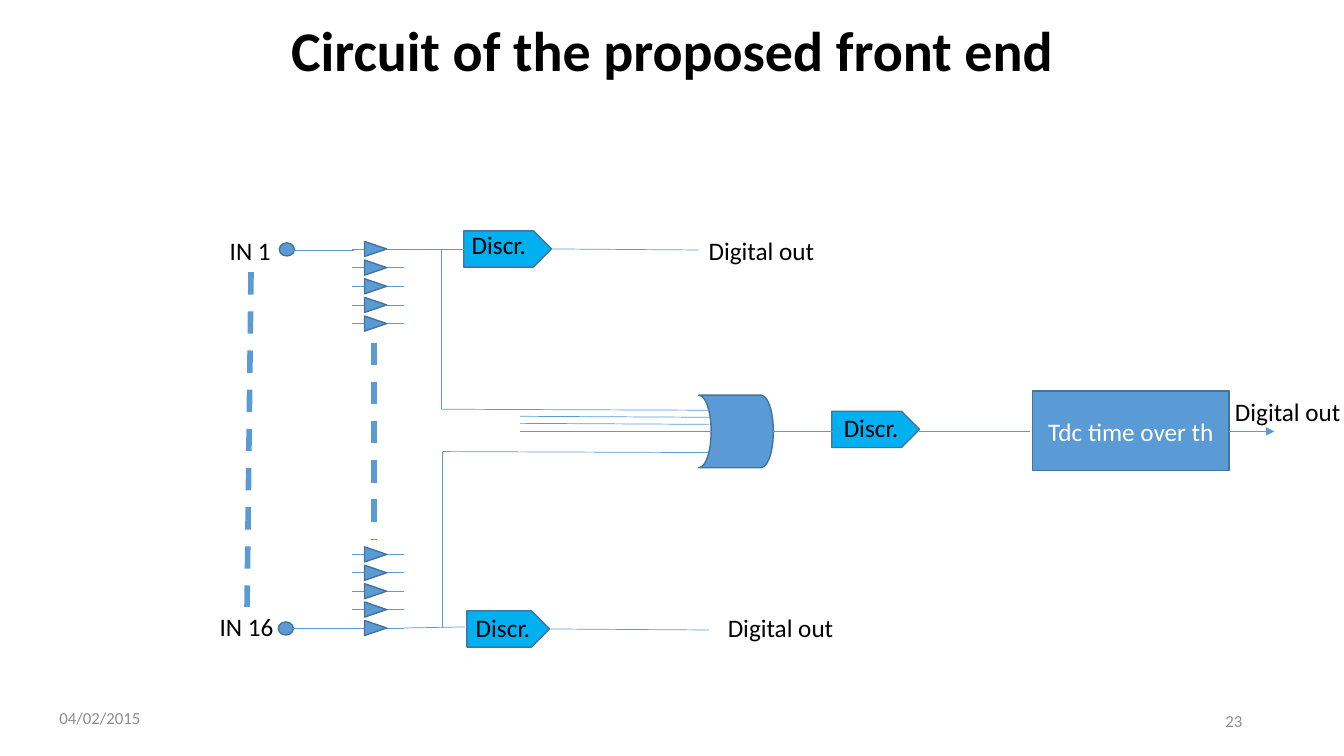
from lxml import etree
from pptx import Presentation
from pptx import util as u
from pptx.dml.color import RGBColor
from pptx.enum import dml, shapes, text
from pptx.oxml.ns import qn

BLUE, OUTLINE, CYAN = "5B9BD5", "43739E", "00B0F0"
BLACK, WHITE, GREY = "000000", "FFFFFF", "8C8C8C"
SHAPE = shapes.MSO_SHAPE
ALIGN = text.PP_ALIGN

presentation = Presentation()
presentation.slide_width = u.Inches(13.33)
presentation.slide_height = u.Inches(7.5)
slide = presentation.slides.add_slide(presentation.slide_layouts[5])


def write(frame, words, size, color, align=ALIGN.LEFT, bold=False):
    paragraph = frame.paragraphs[0]
    paragraph.alignment = align
    run = paragraph.add_run()
    run.text = words
    run.font.name = "Calibri"
    run.font.size = u.Pt(size)
    run.font.bold = bold
    run.font.color.rgb = RGBColor.from_string(color)


def draw_line(x1, y1, x2, y2, width=0.5):
    connector = slide.shapes.add_connector(
        shapes.MSO_CONNECTOR.STRAIGHT, *map(u.Inches, (x1, y1, x2, y2)))
    connector.line.color.rgb = RGBColor.from_string(BLUE)
    connector.line.width = u.Pt(width)
    etree.SubElement(connector._element.spPr, qn("a:effectLst"))
    return connector


# Title
title = slide.shapes.title
title.left, title.top, title.width, title.height = map(u.Inches, (1.86, 0.1, 9.61, 0.77))
title.text_frame.auto_size = text.MSO_AUTO_SIZE.NONE
title.text_frame.vertical_anchor = text.MSO_ANCHOR.MIDDLE
write(title.text_frame, "Circuit of the proposed front end", 40, BLACK, ALIGN.CENTER, True)

# Shapes: kind, left, top, width, height, fill, rotation
blocks = [
    (SHAPE.PENTAGON, 4.6, 2.29, 0.87, 0.36, CYAN, 0),
    (SHAPE.PENTAGON, 4.63, 6.06, 0.82, 0.36, CYAN, 0),
    (SHAPE.PENTAGON, 8.25, 4.08, 0.87, 0.36, CYAN, 0),
    (SHAPE.OVAL, 2.77, 2.41, 0.15, 0.13, BLUE, 0),
    (SHAPE.OVAL, 2.76, 6.17, 0.15, 0.13, BLUE, 0),
    (SHAPE.FLOWCHART_STORED_DATA, 6.93, 3.92, 0.74, 0.72, BLUE, 180),
    (SHAPE.RECTANGLE, 10.24, 3.88, 1.95, 0.79, BLUE, 0),
]

# Two banks of five evenly spaced amplifiers with input and output leads
for first, last in ((2.47, 3.21), (5.5, 6.23)):
    for index in range(5):
        center = first + (last - first) * index / 4
        blocks.append((SHAPE.ISOSCELES_TRIANGLE, 3.65, center - 0.11, 0.15, 0.22, BLUE, 90))
        draw_line(3.49, center, 3.62, center)
        draw_line(3.84, center, 4.01, center)

for kind, left, top, width, height, fill, rotation in blocks:
    shape = slide.shapes.add_shape(kind, *map(u.Inches, (left, top, width, height)))
    shape.rotation = rotation
    shape.shadow.inherit = False
    shape.fill.solid()
    shape.fill.fore_color.rgb = RGBColor.from_string(fill)
    shape.line.color.rgb = RGBColor.from_string(OUTLINE)
    shape.line.width = u.Pt(1)
    if kind == SHAPE.RECTANGLE:
        shape.text_frame.vertical_anchor = text.MSO_ANCHOR.MIDDLE
        write(shape.text_frame, "Tdc time over th", 18, WHITE, ALIGN.CENTER)

# Wires
wires = [
    # First and last channel
    (2.91, 2.48, 3.51, 2.48), (4.01, 2.47, 4.61, 2.47), (5.47, 2.47, 6.93, 2.48),
    (2.91, 6.23, 3.51, 6.23), (4.01, 6.23, 4.61, 6.22), (5.46, 6.24, 7.03, 6.25),
    # Branches into the gate
    (4.38, 2.47, 4.38, 4.06), (4.38, 4.06, 7.03, 4.07),
    (4.39, 4.48, 4.39, 6.23), (4.39, 4.48, 7.02, 4.49),
    (5.16, 4.13, 7.03, 4.14), (5.16, 4.2, 7.03, 4.21), (5.16, 4.28, 7.08, 4.28),
    # Gate to converter
    (7.67, 4.28, 8.26, 4.28), (9.12, 4.28, 10.22, 4.28),
]
for wire in wires:
    draw_line(*wire)

# Output arrow
arrow = draw_line(12.19, 4.28, 12.64, 4.28)
etree.SubElement(arrow.line._get_or_add_ln(), qn("a:tailEnd"), type="triangle")

# Dashed lines for the omitted channels
for ends in ((3.71, 3.4, 3.71, 5.36), (2.49, 2.7, 2.45, 6.02)):
    draw_line(*ends, width=4).line.dash_style = dml.MSO_LINE.DASH

# Labels
labels = [
    ("IN 1", 2.18, 2.29, 0.61),
    ("IN 16", 2.08, 6.02, 0.74),
    ("Discr.", 4.58, 2.23, 0.75),
    ("Discr.", 4.62, 6.03, 0.75),
    ("Discr.", 8.27, 4.04, 0.85),
    ("Digital out", 6.93, 2.29, 1.26),
    ("Digital out", 7.12, 6.03, 1.26),
    ("Digital out", 12.15, 3.88, 1.26),
]
for words, left, top, width in labels:
    box = slide.shapes.add_textbox(*map(u.Inches, (left, top, width, 0.4)))
    box.text_frame.word_wrap = False
    write(box.text_frame, words, 18, BLACK)

# Date and slide number
for words, left, top, align in (("04/02/2015", 0.49, 6.92, ALIGN.LEFT),
                                ("23", 9.42, 6.95, ALIGN.RIGHT)):
    box = slide.shapes.add_textbox(*map(u.Inches, (left, top, 3, 0.4)))
    box.text_frame.word_wrap = True
    box.text_frame.vertical_anchor = text.MSO_ANCHOR.MIDDLE
    write(box.text_frame, words, 12, GREY, align)

presentation.save("out.pptx")
